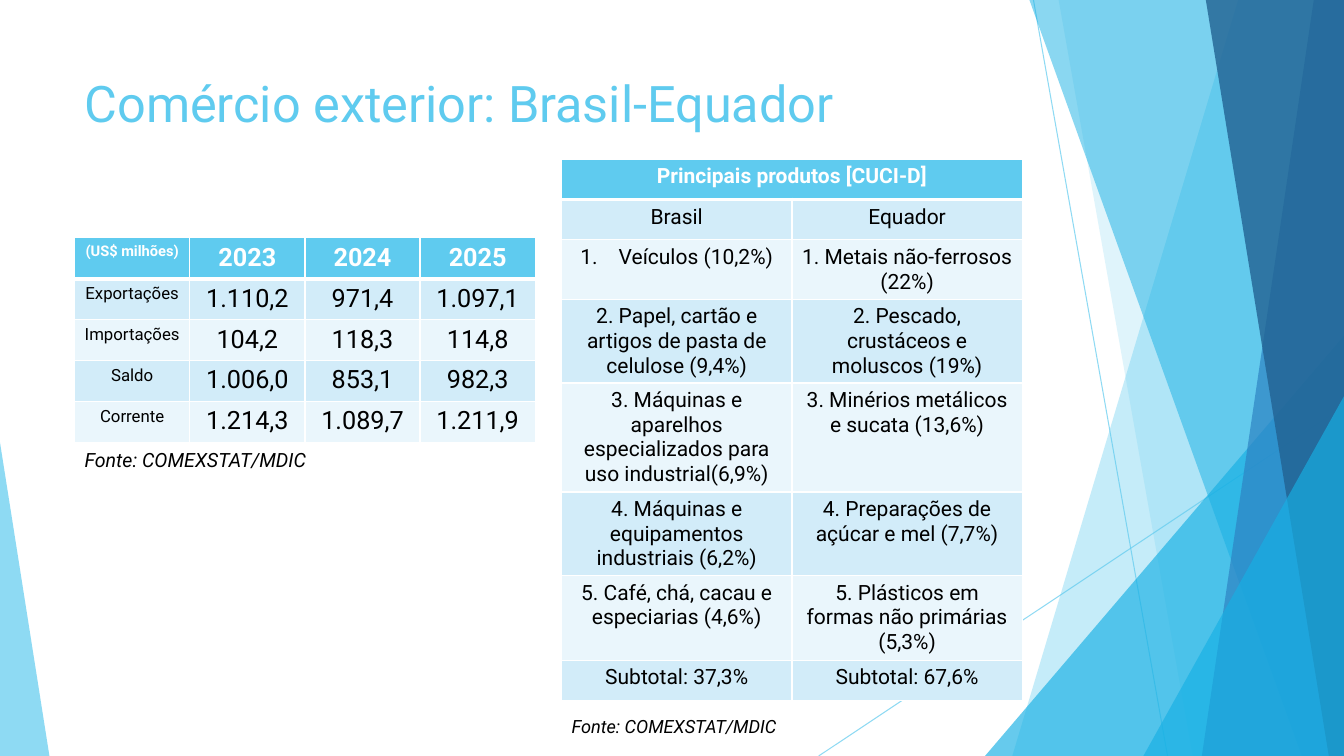
from lxml.etree import SubElement
from pptx import Presentation
from pptx.dml.color import RGBColor
from pptx.enum.shapes import MSO_CONNECTOR, MSO_SHAPE
from pptx.enum.text import PP_ALIGN
from pptx.oxml.ns import qn
from pptx.util import Inches, Pt

COLORS = {
    "sky": "5FCBEF", "cyan": "17B0E4", "blue": "2E83C3", "navy": "226292",
    "band": "D2ECF9", "pale": "EAF6FC", "white": "FFFFFF", "black": "000000",
}
WIDTH, HEIGHT = 13.33, 7.5
SOURCE = "Fonte: COMEXSTAT/MDIC"
CELL_MARGINS = {
    "margin_left": Inches(0.08), "margin_right": Inches(0.08),
    "margin_top": Inches(0.05), "margin_bottom": Inches(0.03),
}

RAYS = [((10.25, 0), (11.58, HEIGHT)), ((WIDTH, 4.03), (8.12, HEIGHT))]
BACK_PANELS = [(12.28, 10.04, "sky", 36), (10.5, 11.83, "sky", 20)]
FRONT_PANELS = [
    (10.21, 12.91, "cyan", 50), (13.03, 11.92, "blue", 70), (11.96, 13.18, "navy", 80),
]

TRADE = [
    ["(US$ milhões)", "2023", "2024", "2025"],
    ["Exportações", "1.110,2", "971,4", "1.097,1"],
    ["Importações", "104,2", "118,3", "114,8"],
    ["Saldo", "1.006,0", "853,1", "982,3"],
    ["Corrente", "1.214,3", "1.089,7", "1.211,9"],
]
PRODUCTS = [
    ["Principais produtos [CUCI-D]", ""],
    ["Brasil", "Equador"],
    ["Veículos (10,2%)", "1. Metais não-ferrosos (22%)"],
    ["2. Papel, cartão e artigos de pasta de celulose (9,4%)",
     "2. Pescado, crustáceos e moluscos (19%)"],
    ["3. Máquinas e aparelhos especializados para uso industrial(6,9%)",
     "3. Minérios metálicos e sucata (13,6%)"],
    ["4. Máquinas e equipamentos industriais (6,2%)",
     "4. Preparações de açúcar e mel (7,7%)"],
    ["5. Café, chá, cacau e especiarias (4,6%)",
     "5. Plásticos em formas não primárias (5,3%)"],
    ["Subtotal: 37,3%", "Subtotal: 67,6%"],
]
PRODUCT_HEIGHTS = [0.4, 0.4, 0.59, 0.83, 1.08, 0.83, 0.84, 0.4]


def color(name):
    return RGBColor.from_string(COLORS[name])


def format_text(para, text, name, **formats):
    span = para.add_run()
    span.text = text
    span.font.color.rgb = color(name)
    for key, value in {"name": "Roboto", **formats}.items():
        setattr(span.font, key, value)


def set_opacity(shape, percent):
    for tint in shape._element.spPr.iter(qn("a:srgbClr")):
        SubElement(tint, qn("a:alpha"), val=str(percent * 1000))


def paint(shape, name, percent):
    shape.shadow.inherit = False
    shape.fill.solid()
    shape.fill.fore_color.rgb = color(name)
    shape.line.fill.background()
    set_opacity(shape, percent)


def add_ray(page, start, end):
    ray = page.shapes.add_connector(
        MSO_CONNECTOR.STRAIGHT, *(Inches(value) for value in start + end))
    ray.line.color.rgb = color("sky")
    ray.line.width = Pt(0.75)
    set_opacity(ray, 70)
    SubElement(ray._element.spPr, qn("a:effectLst"))


def add_panel(page, top_x, bottom_x, name, percent):
    builder = page.shapes.build_freeform(Inches(top_x), 0)
    corners = [(WIDTH, 0), (WIDTH, HEIGHT), (bottom_x, HEIGHT)]
    builder.add_line_segments([(Inches(x), Inches(y)) for x, y in corners])
    paint(builder.convert_to_shape(), name, percent)


def add_triangle(page, box, apex, name, percent):
    triangle = page.shapes.add_shape(
        MSO_SHAPE.ISOSCELES_TRIANGLE, *(Inches(value) for value in box))
    triangle.adjustments[0] = apex
    paint(triangle, name, percent)


def add_backdrop(page):
    for start, end in RAYS:
        add_ray(page, start, end)
    for panel in BACK_PANELS:
        add_panel(page, *panel)
    add_triangle(page, (9.77, 3.33, 3.56, 4.17), 1, "cyan", 66)
    for panel in FRONT_PANELS:
        add_panel(page, *panel)
    add_triangle(page, (11.34, 3.93, 1.99, 3.57), 1, "cyan", 66)
    add_triangle(page, (0, 4.39, 0.49, 3.11), 0, "sky", 70)


def add_text(page, box, text, name, **formats):
    frame = page.shapes.add_textbox(*(Inches(value) for value in box)).text_frame
    frame.word_wrap = True
    format_text(frame.paragraphs[0], text, name, **formats)


def add_borders(cell, is_header):
    properties = cell._tc.get_or_add_tcPr()
    for side in ("lnL", "lnR", "lnT", "lnB"):
        points = 3 if is_header and side == "lnB" else 1
        edge = SubElement(properties, qn(f"a:{side}"), w=str(Pt(points)))
        SubElement(SubElement(edge, qn("a:solidFill")), qn("a:srgbClr"), val=COLORS["white"])


def add_grid(page, box, rows, heights, size_of):
    left, top, width = box
    columns = len(rows[0])
    table = page.shapes.add_table(
        len(rows), columns, Inches(left), Inches(top), Inches(width), Inches(sum(heights))).table
    for column in table.columns:
        column.width = Inches(width / columns)
    for r, (texts, height) in enumerate(zip(rows, heights)):
        table.rows[r].height = Inches(height)
        fill = "sky" if r == 0 else ("band" if r % 2 else "pale")
        for c, text in enumerate(texts):
            cell = table.cell(r, c)
            for key, value in CELL_MARGINS.items():
                setattr(cell, key, value)
            add_borders(cell, r == 0)
            cell.fill.solid()
            cell.fill.fore_color.rgb = color(fill)
            para = cell.text_frame.paragraphs[0]
            para.alignment = PP_ALIGN.CENTER
            if text:
                format_text(para, text, "black" if r else "white",
                            size=Pt(size_of(r, c)), bold=r == 0)
    return table


def add_trade(page, left, top):
    height = 2.03
    heights = [height / len(TRADE)] * len(TRADE)

    def size_of(r, c):
        return 18 if c else (12 if r else 10.5)

    add_grid(page, (left, top, 4.57), TRADE, heights, size_of)
    add_text(page, (left, top + height, 4.82, 0.34), SOURCE, "black",
             size=Pt(14), italic=True)


def add_products(page, left, top):
    table = add_grid(page, (left, top, 4.57), PRODUCTS, PRODUCT_HEIGHTS, lambda r, c: 15)
    table.cell(0, 0).merge(table.cell(0, 1))
    numbering = table.cell(2, 0).text_frame.paragraphs[0]._p.get_or_add_pPr()
    numbering.set("marL", str(Inches(0.38)))
    numbering.set("indent", str(Inches(-0.38)))
    SubElement(numbering, qn("a:buFont"), typeface="+mj-lt")
    SubElement(numbering, qn("a:buAutoNum"), type="arabicPeriod")
    add_text(page, (left, top + 5.47, 4.82, 0.32), SOURCE, "black",
             size=Pt(13), italic=True)


def main():
    deck = Presentation()
    deck.slide_width, deck.slide_height = Inches(WIDTH), Inches(HEIGHT)
    page = deck.slides.add_slide(deck.slide_layouts[6])
    add_backdrop(page)
    add_text(page, (0.74, 0.67, 9.4, 1.44), "Comércio exterior: Brasil-Equador", "sky",
             size=Pt(36))
    add_trade(page, 0.74, 2.36)
    add_products(page, 5.57, 1.58)
    deck.save("out.pptx")


if __name__ == "__main__":
    main()
